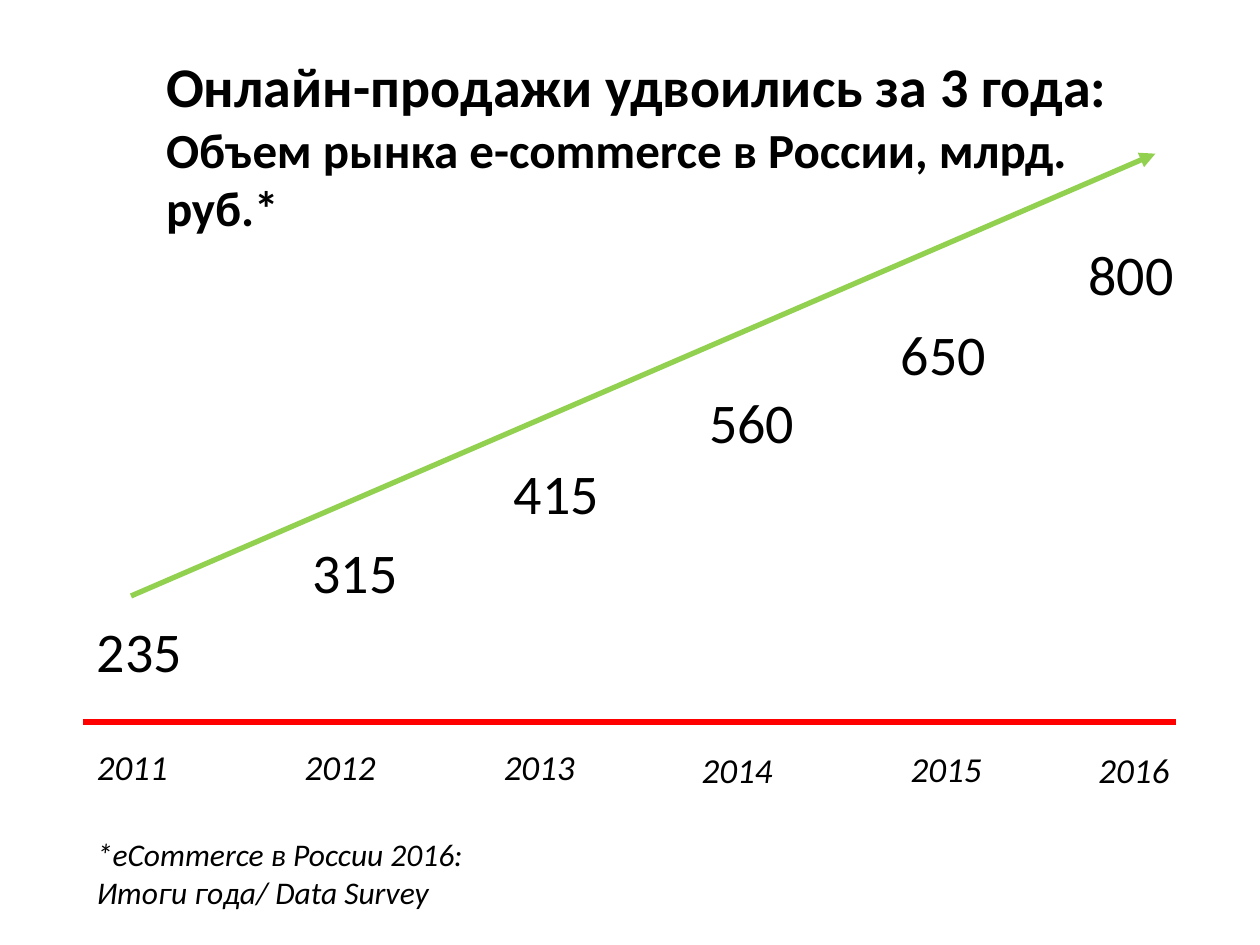
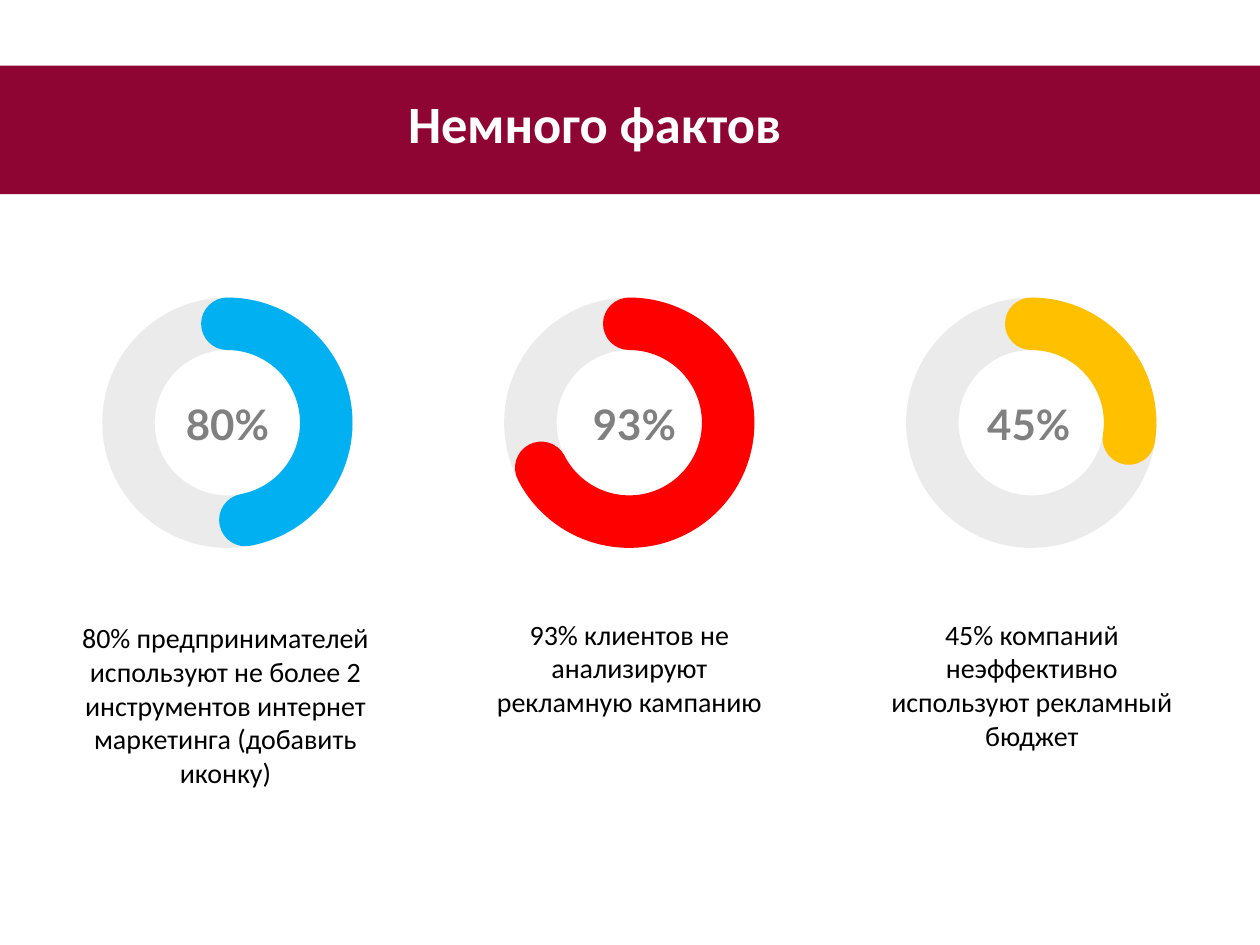
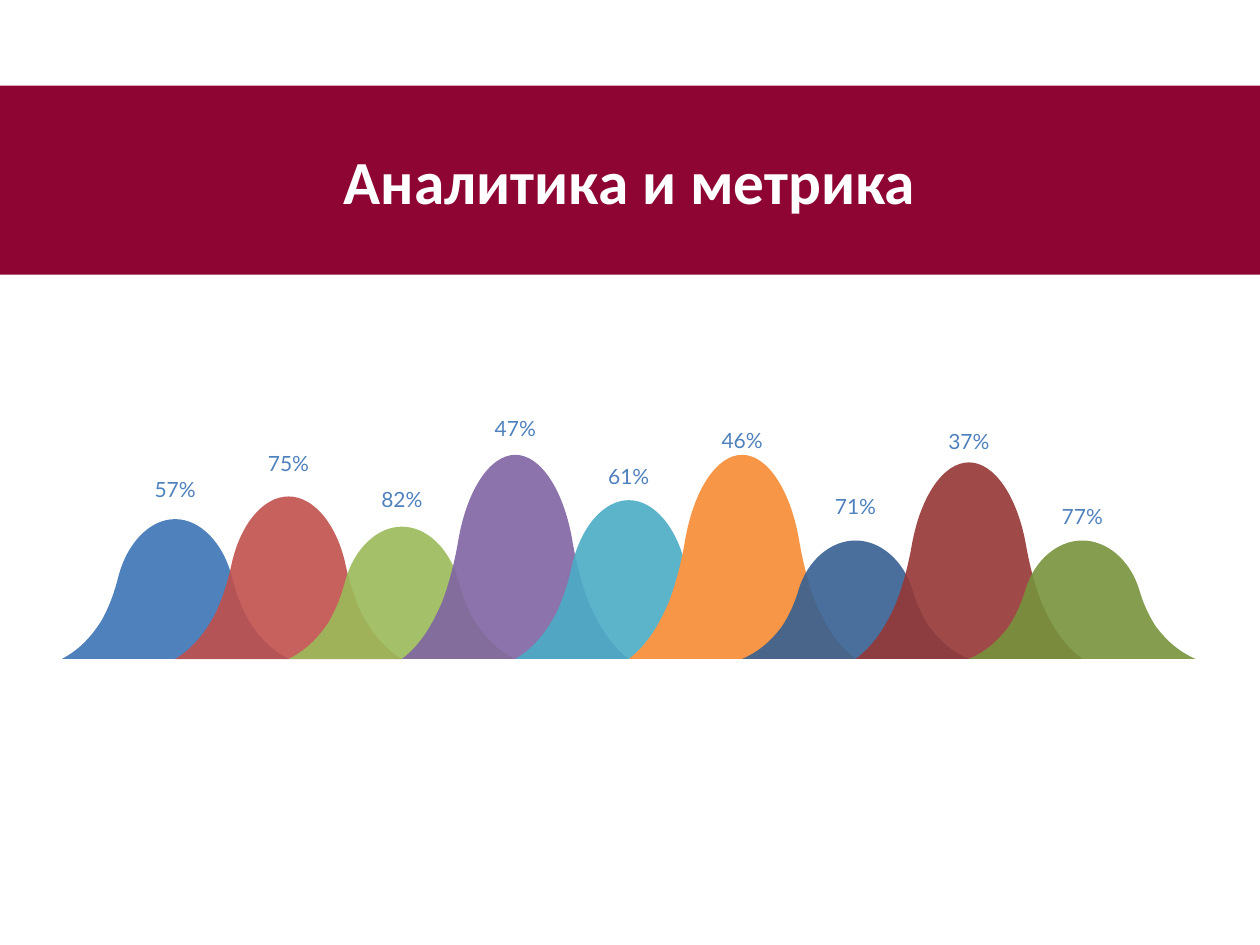
from dataclasses import dataclass
from typing import NamedTuple

from lxml.etree import SubElement
from pptx import Presentation
from pptx.dml.color import RGBColor
from pptx.enum.shapes import MSO_CONNECTOR as Connector, MSO_SHAPE as Shape
from pptx.enum.text import MSO_ANCHOR as Anchor, MSO_AUTO_SIZE as AutoSize, PP_ALIGN as Align
from pptx.oxml.ns import qn
from pptx.util import Pt

SCALE = 9144


@dataclass(frozen=True)
class Theme:
    font: str = "Calibri"
    number_font: str = "Lato"
    black: str = "000000"
    white: str = "FFFFFF"
    band: str = "8E0433"
    axis: str = "FF0000"
    trend: str = "92D050"
    ring: str = "BFBFBF"
    gray: str = "808080"
    label: str = "4F81BD"
    gauges: tuple = ("00B0F0", "FF0000", "FFC000")
    humps: tuple = ("4F81BD", "C0504D", "9BBB59", "8064A2", "4BACC6",
                    "F79646", "376092", "953735", "77933C")
    display_size: int = 32
    subtitle_size: int = 28
    facts_size: int = 30
    analytics_size: int = 35
    year_size: int = 20
    note_size: int = 18
    caption_size: int = 16
    gauge_size: int = 24
    label_size: int = 12
    line_width: int = 3
    ring_width: int = 30


THEME = Theme()


class Box(NamedTuple):
    left: int
    top: int
    width: int
    height: int

    def inside(self, left, top, width, height):
        return Box(self.left + left, self.top + top, width, height)

    def point(self, x, y):
        return self.left + x, self.top + y

    def emu(self):
        return [px(value) for value in self]


class Style(NamedTuple):
    size: int
    color: str = THEME.black
    font: str = THEME.font
    bold: bool = False
    italic: bool = False


def px(value):
    return round(value * SCALE)


def rgb(color):
    return RGBColor.from_string(color)


def set_opacity(fill_parent, percent):
    color = fill_parent.find(qn("a:solidFill")).find(qn("a:srgbClr"))
    SubElement(color, qn("a:alpha"), val=str(percent * 1000))


def add_text(page, box, lines, align=Align.LEFT, anchor=Anchor.TOP, wrap=True,
             grow=False, inset=None, spacing=None):
    frame = page.shapes.add_textbox(*box.emu()).text_frame
    frame.word_wrap = wrap
    frame.vertical_anchor = anchor
    frame.auto_size = AutoSize.SHAPE_TO_FIT_TEXT if grow else AutoSize.NONE
    if inset is not None:
        frame.margin_left = frame.margin_right = px(inset)
        frame.margin_top = frame.margin_bottom = px(inset)
    for index, (text, style) in enumerate(lines):
        para = frame.add_paragraph() if index else frame.paragraphs[0]
        para.alignment = align
        if spacing:
            para.line_spacing = spacing
        run = para.add_run()
        run.text = text
        font = run.font
        font.name, font.size = style.font, Pt(style.size)
        font.bold, font.italic = style.bold, style.italic
        font.color.rgb = rgb(style.color)


def add_line(page, start, end, color, arrow=False):
    line = page.shapes.add_connector(
        Connector.STRAIGHT, *map(px, start), *map(px, end))
    line.line.color.rgb = rgb(color)
    line.line.width = Pt(THEME.line_width)
    properties = line.element.spPr
    if arrow:
        SubElement(properties.find(qn("a:ln")), qn("a:tailEnd"), type="triangle")
    SubElement(properties, qn("a:effectLst"))


def paint(shape, color):
    shape.shadow.inherit = False
    shape.fill.solid()
    shape.fill.fore_color.rgb = rgb(color)
    shape.line.fill.background()


def add_title_band(page, box, title_box, title, size):
    paint(page.shapes.add_shape(Shape.RECTANGLE, *box.emu()), THEME.band)
    add_text(page, box.inside(*title_box),
             [(title, Style(size, THEME.white, bold=True))],
             Align.CENTER, Anchor.MIDDLE)


def add_ring(page, box, kind, color):
    ring = page.shapes.add_shape(kind, *box.emu())
    ring.shadow.inherit = False
    ring.fill.background()
    ring.line.color.rgb = rgb(color)
    ring.line.width = Pt(THEME.ring_width)
    return ring


def add_gauge(page, box, label, label_left, end_angle, color):
    add_text(page, box.inside(label_left, 54, 101, 51),
             [(label, Style(THEME.gauge_size, THEME.gray, THEME.number_font, bold=True))],
             Align.CENTER)
    track = add_ring(page, box, Shape.OVAL, THEME.ring)
    set_opacity(track.element.spPr.find(qn("a:ln")), 30)
    arc = add_ring(page, box, Shape.ARC, color)
    arc.adjustments[0] = 270 * 0.6
    arc.adjustments[1] = end_angle * 0.6
    arc.element.spPr.find(qn("a:ln")).set("cap", "rnd")


def hump_controls(box):
    rise = [(0, 1), (13, 0.94), (23, 0.85), (32, 0.72), (38, 0.62), (42, 0.52),
            (45, 0.41), (52, 0.17), (70, 0), (90, 0)]
    fall = [(box.width - x, y) for x, y in reversed(rise[:-1])]
    return [tuple(map(px, box.point(x, y * box.height))) for x, y in rise + fall]


def bend_lines(shape):
    lines = list(shape.element.iter(qn("a:lnTo")))
    for first in range(0, len(lines), 3):
        trio = lines[first:first + 3]
        curve = trio[0]
        outline = curve.getparent()
        bezier = SubElement(outline, qn("a:cubicBezTo"))
        outline.replace(curve, bezier)
        for line in trio:
            bezier.append(line[0])
        for line in trio[1:]:
            outline.remove(line)


def add_hump(page, box, color, opacity):
    start, *controls = hump_controls(box)
    builder = page.shapes.build_freeform(*start, scale=1.0)
    builder.add_line_segments(controls, close=True)
    hump = builder.convert_to_shape()
    bend_lines(hump)
    paint(hump, color)
    if opacity < 100:
        set_opacity(hump.element.spPr, opacity)


def add_sales_trend(page, box):
    sales = [("235", 1, 362), ("315", 172, 300), ("415", 332, 237),
             ("560", 487, 181), ("650", 639, 127), ("800", 788, 63)]
    years = [("2011", 1, 465), ("2012", 166, 465), ("2013", 324, 465),
             ("2014", 481, 467), ("2015", 647, 466), ("2016", 796, 467)]
    add_line(page, box.point(0, 451), box.point(box.width, 451), THEME.axis)
    rows = [(sales, 89, 64, Style(THEME.display_size)),
            (years, 77, 44, Style(THEME.year_size, italic=True))]
    for row, width, height, style in rows:
        for text, left, top in row:
            add_text(page, box.inside(left, top, width, height), [(text, style)],
                     wrap=False, grow=True)
    add_line(page, box.point(38, 351), box.point(851, 0), THEME.trend, arrow=True)


def add_hump_chart(page, box):
    humps = [("57%", 111, 49, 100), ("75%", 129, 28, 90), ("82%", 105, 57, 90),
             ("47%", 162, 0, 90), ("61%", 126, 38, 90), ("46%", 162, 10, 100),
             ("71%", 94, 62, 90), ("37%", 156, 11, 90), ("77%", 94, 70, 90)]
    step = box.width // (len(humps) + 1)
    style = Style(THEME.label_size, THEME.label, THEME.number_font)
    group = page.shapes.add_group_shape()
    for index, (_, height, _, opacity) in enumerate(humps):
        add_hump(group, box.inside(index * step, box.height - height, 2 * step, height),
                 THEME.humps[index], opacity)
    for index, (text, _, top, _) in enumerate(humps):
        add_text(group, box.inside((index + 1) * step - 32, top, 64, 35), [(text, style)],
                 Align.CENTER, Anchor.MIDDLE, grow=True, inset=6, spacing=1.2)


def build_sales(page):
    add_sales_trend(page, Box(66, 122, 867, 507))
    note = Style(THEME.note_size, italic=True)
    add_text(page, Box(67, 658, 598, 71),
             [("*eCommerce в России 2016:", note), ("Итоги года/ Data Survey", note)],
             grow=True)
    add_text(page, Box(122, 58, 795, 113),
             [("Онлайн-продажи удвоились за 3 года:", Style(THEME.display_size, bold=True)),
              ("Объем рынка e-commerce в России, млрд. руб.*",
               Style(THEME.subtitle_size, bold=True))],
             anchor=Anchor.MIDDLE)


def build_facts(page):
    add_title_band(page, Box(0, 52, 1000, 102), (264, 10, 416, 70),
                   "Немного фактов", THEME.facts_size)
    facts = [
        ("80%", 28, 79.5, Box(36, 488, 286, 197),
         "80% предпринимателей используют не более 2 инструментов интернет "
         "маркетинга (добавить иконку)"),
        ("93%", 32, 152.84, Box(380, 485, 239, 131),
         "93% клиентов не анализируют рекламную кампанию"),
        ("45%", 26, 9.21, Box(686, 485, 266, 131),
         "45% компаний неэффективно используют рекламный бюджет"),
    ]
    for index, (label, label_left, end_angle, caption_box, caption) in enumerate(facts):
        add_gauge(page, Box(102 + 319 * index, 257, 157, 157),
                  label, label_left, end_angle, THEME.gauges[index])
        add_text(page, caption_box, [(caption, Style(THEME.caption_size))], Align.CENTER)


def build_analytics(page):
    add_title_band(page, Box(0, 68, 1000, 150), (50, 12, 900, 125),
                   "Аналитика и метрика", THEME.analytics_size)
    add_hump_chart(page, Box(49, 320, 900, 203))


def main():
    deck = Presentation()
    deck.slide_width, deck.slide_height = px(1000), px(750)
    for build in (build_sales, build_facts, build_analytics):
        build(deck.slides.add_slide(deck.slide_layouts[6]))
    deck.save("out.pptx")


if __name__ == "__main__":
    main()
